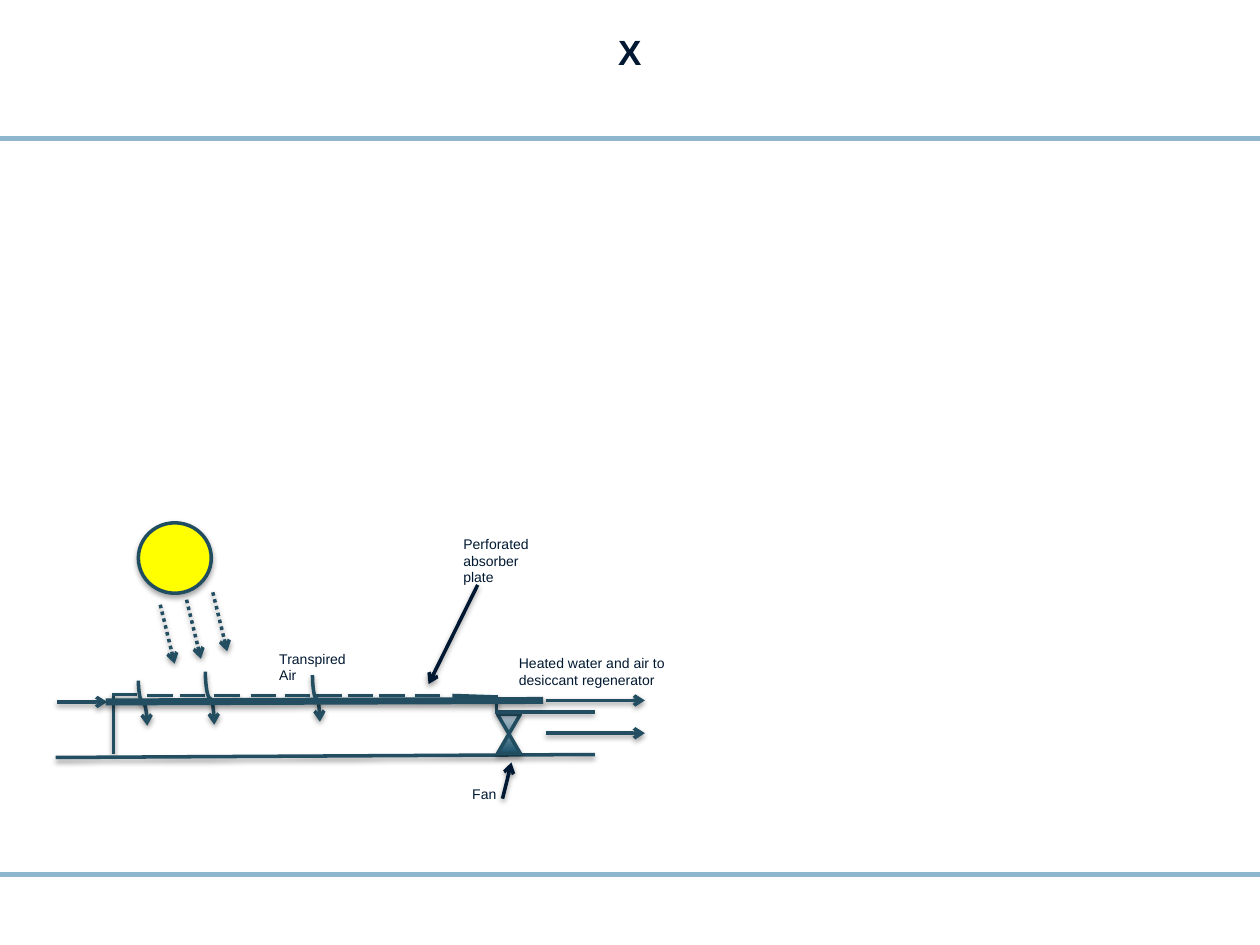
"""Draw a slide with a solar air and water heater diagram."""
from dataclasses import dataclass

from lxml import etree
from pptx import Presentation
from pptx.dml.color import RGBColor
from pptx.enum.dml import MSO_LINE
from pptx.enum.shapes import MSO_CONNECTOR, MSO_SHAPE
from pptx.enum.text import MSO_ANCHOR, PP_ALIGN
from pptx.oxml.ns import qn
from pptx.util import Cm, Pt

STRAIGHT, CURVE = MSO_CONNECTOR.STRAIGHT, MSO_CONNECTOR.CURVE
ELLIPSE, COLLATE = MSO_SHAPE.OVAL, MSO_SHAPE.FLOWCHART_COLLATE
DOT = MSO_LINE.ROUND_DOT
CENTER, TOP = PP_ALIGN.CENTER, MSO_ANCHOR.TOP
RULE, TEAL, OUTLINE, NAVY = "8EB7CE", "234E62", "214D61", "001831"
PLATE_Y = 14.02
DASH_LENGTH = 0.51
DASH_STARTS = (2.97, 3.63, 4.32, 5.05, 5.74, 6.38, 7.01, 7.65, 8.36)
RAY_STARTS = ((3.76, 12.09), (4.29, 11.94), (3.23, 12.19))
RAY_DX, RAY_DY = 0.29, 1.19


@dataclass(frozen=True)
class Line:
    x1: float
    y1: float
    x2: float
    y2: float
    color: str = TEAL
    width: float = 2
    arrow: bool = False
    dotted: bool = False
    curved: bool = False
    shadow: bool = True


@dataclass(frozen=True)
class Label:
    text: str
    x: float
    y: float
    w: float
    h: float


RULES = [Line(0, y, 25.4, y, RULE, 3, shadow=False) for y in (2.79, 17.63)]
DASHES = [Line(x, PLATE_Y, x + DASH_LENGTH, PLATE_Y) for x in DASH_STARTS]
RAYS = [Line(x, y, x + RAY_DX, y + RAY_DY, arrow=True, dotted=True)
        for x, y in RAY_STARTS]
FRAME = [
    Line(1.14, 14.15, 2.16, 14.15, arrow=True),
    Line(2.29, 14, 2.29, 15.19),
    Line(1.12, 15.27, 11.99, 15.21),
    Line(10.01, 14.33, 10.01, PLATE_Y),
    Line(2.26, 14, 2.77, 14),
    *DASHES,
    Line(9.12, PLATE_Y, 10.03, 14.05),
    Line(11, 14.78, 13, 14.78, arrow=True),
]
AIR_FLOWS = [
    Line(2.79, 13.72, 2.97, 14.63, arrow=True, curved=True),
    Line(4.14, 13.54, 4.32, 14.61, arrow=True, curved=True),
    Line(6.3, 13.61, 6.45, 14.55, arrow=True, curved=True),
]
POINTERS = [
    Line(10.13, 16.1, 10.31, 15.37, NAVY, arrow=True),
    Line(9.63, 11.79, 8.64, 13.79, NAVY, arrow=True),
]
OUTLETS = [
    Line(9.98, 14.35, 11.99, 14.35),
    Line(11, 14.12, 13, 14.12, arrow=True),
    Line(2.13, 14.15, 10.95, 14.12, width=4),
]
LABELS = [
    Label("Heated water and air to desiccant regenerator", 10.21, 13.08, 3.61, 0.94),
    Label("Transpired Air", 5.38, 12.98, 1.98, 0.94),
    Label("Fan", 9.27, 15.72, 2.31, 0.61),
    Label("Perforated absorber plate", 9.09, 10.67, 1.98, 1.27),
]


def rgb(color: str) -> RGBColor:
    """Turn a hex string into a colour."""
    return RGBColor.from_string(color)


def set_effects(sp, opacity: int = 0, distance: float = 1.6) -> None:
    """Give a shape a soft shadow below it, or none at zero opacity."""
    effects = etree.SubElement(sp._element.spPr, qn("a:effectLst"))
    if opacity:
        shadow = etree.SubElement(
            effects, qn("a:outerShdw"), blurRad=str(Pt(3.1)),
            dist=str(Pt(distance)), dir="5400000", rotWithShape="0")
        black = etree.SubElement(shadow, qn("a:srgbClr"), val="000000")
        etree.SubElement(black, qn("a:alpha"), val=str(opacity * 1000))


def draw_line(s, line: Line) -> None:
    """Draw a straight line, or a curve that leaves and arrives vertically."""
    ends = (line.x1, line.y1, line.x2, line.y2)
    if line.curved:
        cx, cy = (line.x1 + line.x2) / 2, (line.y1 + line.y2) / 2
        dx, dy = (line.x2 - line.x1) / 2, (line.y2 - line.y1) / 2
        ends = (cx + dy, cy - dx, cx - dy, cy + dx)
    kind = CURVE if line.curved else STRAIGHT
    sp = s.shapes.add_connector(kind, *(Cm(v) for v in ends))
    if line.curved:
        sp._element.spPr.find(qn("a:xfrm")).set("rot", "16200000")
    sp.line.color.rgb = rgb(line.color)
    sp.line.width = Pt(line.width)
    if line.dotted:
        sp.line.dash_style = DOT
    if line.arrow:
        etree.SubElement(sp.line._get_or_add_ln(), qn("a:tailEnd"), type="arrow")
    set_effects(sp, 38 if line.shadow else 0)


def draw_lines(s, lines: list[Line]) -> None:
    """Draw lines in order."""
    for line in lines:
        draw_line(s, line)


def draw_shape(s, kind, x: float, y: float, w: float, h: float):
    """Draw an outlined shape with a shadow and return it for filling."""
    sp = s.shapes.add_shape(kind, Cm(x), Cm(y), Cm(w), Cm(h))
    sp.line.color.rgb = rgb(OUTLINE)
    sp.line.width = Pt(2)
    sp.shadow.inherit = True
    set_effects(sp, 35, 1.8)
    return sp


def draw_label(s, label: Label, size: float = 8, bold: bool = False):
    """Draw a wrapped text box and return its text frame."""
    sp = s.shapes.add_textbox(Cm(label.x), Cm(label.y), Cm(label.w), Cm(label.h))
    tf = sp.text_frame
    tf.word_wrap = True
    p = tf.paragraphs[0]
    p.text = label.text
    p.font.name = "Arial"
    p.font.size = Pt(size)
    p.font.bold = bold
    p.font.color.rgb = rgb(NAVY)
    return tf


def main() -> None:
    """Build and save the slide."""
    prs = Presentation()
    prs.slide_width, prs.slide_height = Cm(25.4), Cm(19.05)
    s = prs.slides.add_slide(prs.slide_layouts[6])
    draw_lines(s, RULES)

    tf = draw_label(s, Label("X", 0, 0.53, 25.4, 1.32), 20, True)
    tf.vertical_anchor = TOP
    tf.margin_top, tf.margin_bottom = Cm(0.08), Cm(0)
    tf.paragraphs[0].alignment = CENTER

    draw_lines(s, FRAME + AIR_FLOWS)
    sun = draw_shape(s, ELLIPSE, 2.79, 10.54, 1.47, 1.42)
    sun.fill.solid()
    sun.fill.fore_color.rgb = rgb("FFFF00")
    draw_lines(s, RAYS)

    fan = draw_shape(s, COLLATE, 10.03, 14.4, 0.46, 0.79)
    fan.fill.gradient()
    fan.fill.gradient_angle = 90
    for stop, color, position in zip(fan.fill.gradient_stops, ("1A516B", "B4C3CF"), (0, 1)):
        stop.color.rgb = rgb(color)
        stop.position = position

    for label in LABELS:
        draw_label(s, label)
    draw_lines(s, POINTERS + OUTLETS)
    prs.save("out.pptx")


if __name__ == "__main__":
    main()
